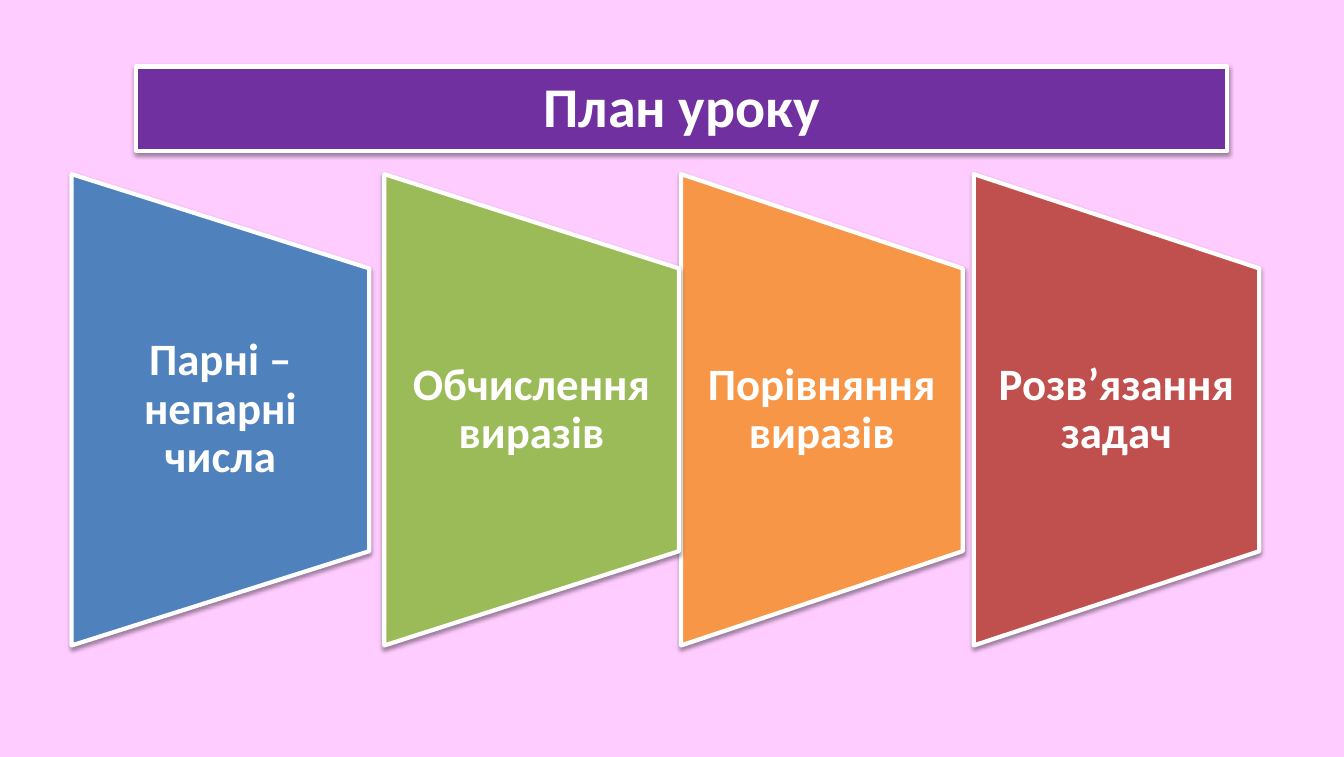
from dataclasses import dataclass

from lxml import etree
from pptx import Presentation, util as u
from pptx.dml import color
from pptx.enum import shapes, text
from pptx.oxml import ns

WIDE, HIGH = u.Inches(13.32), u.Inches(7.5)
MID = 54.13
TALL = 62.27
BAND = 37.33


@dataclass
class Step:
    label: str
    left: float
    width: float
    fill: str


STEPS = [
    Step("Порівняння виразів", 50.68, 20.95, "F79646"),
    Step("Розв’язання задач", 72.45, 21.25, "C0504D"),
    Step("Обчислення виразів", 28.6, 21.92, "9BBB59"),
    Step("Парні – непарні числа", 5.33, 22.15, "4F81BD"),
]


def col(share: float) -> int:
    return round(WIDE * share / 100)


def row(share: float) -> int:
    return round(HIGH * share / 100)


def paint(part, shade: str) -> None:
    part.solid()
    part.fore_color.rgb = color.RGBColor.from_string(shade)


def place(shape, left: int, top: int, width: int, height: int) -> None:
    shape.left, shape.top, shape.width, shape.height = left, top, width, height


def style(shape, fill: str) -> None:
    paint(shape.fill, fill)
    paint(shape.line.fill, "FFFFFF")
    shape.line.width = u.Pt(3)
    shape.shadow.inherit = False
    effects = shape._element.spPr.find(ns.qn("a:effectLst"))
    shade = etree.SubElement(
        effects, ns.qn("a:outerShdw"), blurRad=str(u.Pt(3.1)),
        dist=str(u.Pt(1.6)), dir="5400000", rotWithShape="0")
    black = etree.SubElement(shade, ns.qn("a:srgbClr"), val="000000")
    etree.SubElement(black, ns.qn("a:alpha"), val="38000")


def write(frame, label: str, size: int, space: float) -> None:
    frame.text = label
    frame.word_wrap = True
    para = frame.paragraphs[0]
    para.alignment = text.PP_ALIGN.CENTER
    para.line_spacing = space
    font = para.runs[0].font
    font.name, font.size, font.bold = "Calibri", u.Pt(size), True
    paint(font.fill, "FFFFFF")


def head(slide, label: str) -> None:
    title = slide.shapes.title
    place(title, col(10.14), row(8.8), col(81.16), row(10.27))
    style(title, "7030A0")
    write(title.text_frame, label, 40, 1.0)
    title.text_frame.vertical_anchor = text.MSO_ANCHOR.TOP
    title.text_frame.auto_size = text.MSO_AUTO_SIZE.SHAPE_TO_FIT_TEXT


def draw(slide, step: Step) -> None:
    left, width = col(step.left), col(step.width)
    long, mid = row(TALL), row(MID)
    panel = slide.shapes.add_shape(
        shapes.MSO_SHAPE.FLOWCHART_MANUAL_OPERATION,
        left + (width - long) // 2, mid - width // 2, long, width)
    panel.rotation = 270
    style(panel, step.fill)
    box = slide.shapes.add_textbox(left, mid - row(BAND) // 2, width, row(BAND))
    frame = box.text_frame
    frame.margin_left = frame.margin_right = u.Inches(0.22)
    frame.margin_top = frame.margin_bottom = 0
    frame.vertical_anchor = text.MSO_ANCHOR.MIDDLE
    write(frame, step.label, 32, 0.9)


def main() -> None:
    deck = Presentation()
    deck.slide_width, deck.slide_height = WIDE, HIGH
    slide = deck.slides.add_slide(deck.slide_layouts[5])
    paint(slide.background.fill, "FFCCFF")
    head(slide, "План уроку")
    for step in STEPS:
        draw(slide, step)
    deck.save("out.pptx")


if __name__ == "__main__":
    main()
